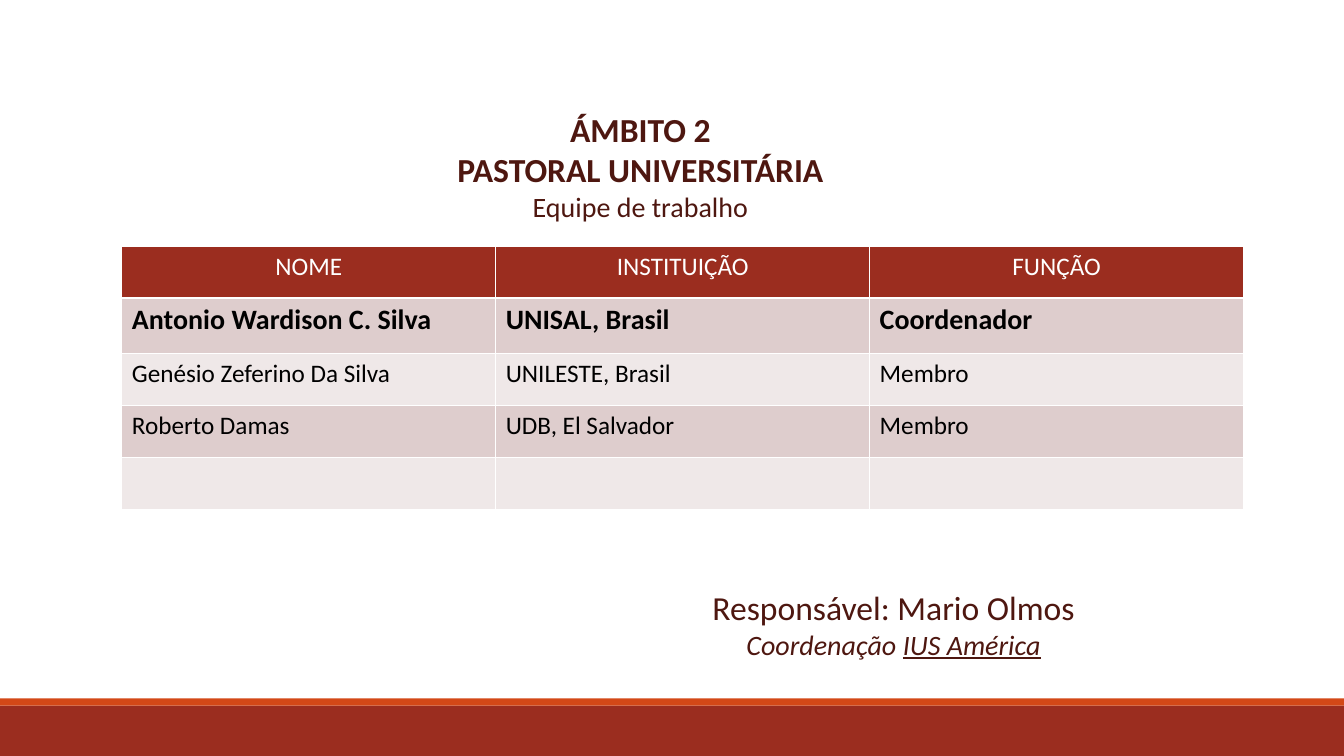
from dataclasses import dataclass

from pptx import Presentation
from pptx.dml.color import RGBColor
from pptx.enum import shapes, text
from pptx.util import Cm, Pt


@dataclass(frozen=True)
class Theme:
    font: str = "Calibri"
    brick: str = "9B2D1F"
    orange: str = "D34817"
    maroon: str = "4E1710"
    white: str = "FFFFFF"
    black: str = "000000"
    bands: tuple[str, str] = ("DECDCD", "EFE8E8")
    large: int = 24
    medium: int = 20
    small: int = 18


@dataclass(frozen=True)
class Box:
    """Left, top, width and height in centimetres."""
    left: float
    top: float
    width: float
    height: float

    def lengths(self) -> tuple[Cm, Cm, Cm, Cm]:
        return Cm(self.left), Cm(self.top), Cm(self.width), Cm(self.height)


@dataclass(frozen=True)
class Span:
    words: str
    size: int
    color: str
    bold: bool = False
    italic: bool = False
    underline: bool = False


@dataclass(frozen=True)
class Bar:
    box: Box
    color: str


@dataclass(frozen=True)
class Member:
    name: str = ""
    institution: str = ""
    role: str = ""
    leads: bool = False


THEME = Theme()
WIDTH, HEIGHT = 33.87, 19.05
CENTER = text.PP_ALIGN.CENTER
LEFT = text.PP_ALIGN.LEFT

BARS = [
    Bar(Box(0, 17.78, WIDTH, 1.27), THEME.brick),
    Bar(Box(0, 17.6, WIDTH, 0.18), THEME.orange),
]
HEADING_BOX = Box(7.72, 2.62, 16.84, 3.18)
HEADING = [
    [Span("ÁMBITO 2", THEME.large, THEME.maroon, bold=True)],
    [Span("PASTORAL UNIVERSITÁRIA", THEME.large, THEME.maroon, bold=True)],
    [Span("Equipe de trabalho", THEME.medium, THEME.maroon)],
]
CONTACT_BOX = Box(14.1, 14.66, 16.84, 2.13)
CONTACT = [
    [Span("Responsável: Mario Olmos", THEME.large, THEME.maroon)],
    [
        Span("Coordenação ", THEME.medium, THEME.maroon, italic=True),
        Span("IUS América", THEME.medium, THEME.maroon, italic=True, underline=True),
    ],
]
TEAM_BOX = Box(3.07, 6.2, 28.27, 6.64)
COLUMNS = ("NOME", "INSTITUIÇÃO", "FUNÇÃO")
ROW_HEIGHT, LEAD_ROW_HEIGHT = 1.31, 1.4
TEAM = [
    Member("Antonio Wardison C. Silva", "UNISAL, Brasil", "Coordenador", leads=True),
    Member("Genésio Zeferino Da Silva", "UNILESTE, Brasil", "Membro"),
    Member("Roberto Damas", "UDB, El Salvador", "Membro"),
    Member(),
]


def add_span(paragraph, span: Span) -> None:
    run = paragraph.add_run()
    run.text = span.words
    font = run.font
    font.name = THEME.font
    font.size = Pt(span.size)
    font.color.rgb = RGBColor.from_string(span.color)
    font.bold = span.bold
    font.italic = span.italic
    font.underline = span.underline


def write_centered(frame, lines: list[list[Span]]) -> None:
    frame.word_wrap = True
    frame.auto_size = text.MSO_AUTO_SIZE.SHAPE_TO_FIT_TEXT
    frame.vertical_anchor = text.MSO_ANCHOR.TOP
    for index, spans in enumerate(lines):
        paragraph = frame.add_paragraph() if index else frame.paragraphs[0]
        paragraph.alignment = CENTER
        for span in spans:
            add_span(paragraph, span)


def add_bar(slide, bar: Bar) -> None:
    band = slide.shapes.add_shape(shapes.MSO_SHAPE.RECTANGLE, *bar.box.lengths())
    band.shadow.inherit = False
    band.fill.solid()
    band.fill.fore_color.rgb = RGBColor.from_string(bar.color)
    band.line.fill.background()


def fill_cell(cell, span: Span, fill: str, alignment) -> None:
    cell.fill.solid()
    cell.fill.fore_color.rgb = RGBColor.from_string(fill)
    paragraph = cell.text_frame.paragraphs[0]
    paragraph.alignment = alignment
    if span.words:
        add_span(paragraph, span)


def add_team_table(slide) -> None:
    """White rules between the cells come from the default table style."""
    team = slide.shapes.add_table(
        len(TEAM) + 1, len(COLUMNS), *TEAM_BOX.lengths()
    ).table
    for column in team.columns:
        column.width = Cm(TEAM_BOX.width / len(COLUMNS))

    team.rows[0].height = Cm(ROW_HEIGHT)
    for cell, label in zip(team.rows[0].cells, COLUMNS):
        fill_cell(cell, Span(label, THEME.small, THEME.white), THEME.brick, CENTER)

    for index, member in enumerate(TEAM):
        row = team.rows[index + 1]
        row.height = Cm(LEAD_ROW_HEIGHT if member.leads else ROW_HEIGHT)
        size = THEME.medium if member.leads else THEME.small
        entries = (member.name, member.institution, member.role)
        for cell, entry in zip(row.cells, entries):
            span = Span(entry, size, THEME.black, bold=member.leads)
            fill_cell(cell, span, THEME.bands[index % 2], LEFT)


def main() -> None:
    deck = Presentation()
    deck.slide_width, deck.slide_height = Cm(WIDTH), Cm(HEIGHT)
    slide = deck.slides.add_slide(deck.slide_layouts[5])

    for bar in BARS:
        add_bar(slide, bar)

    heading = slide.shapes.title
    heading.left, heading.top, heading.width, heading.height = HEADING_BOX.lengths()
    write_centered(heading.text_frame, HEADING)

    contact = slide.shapes.add_textbox(*CONTACT_BOX.lengths())
    write_centered(contact.text_frame, CONTACT)

    add_team_table(slide)
    deck.save("out.pptx")


if __name__ == "__main__":
    main()
